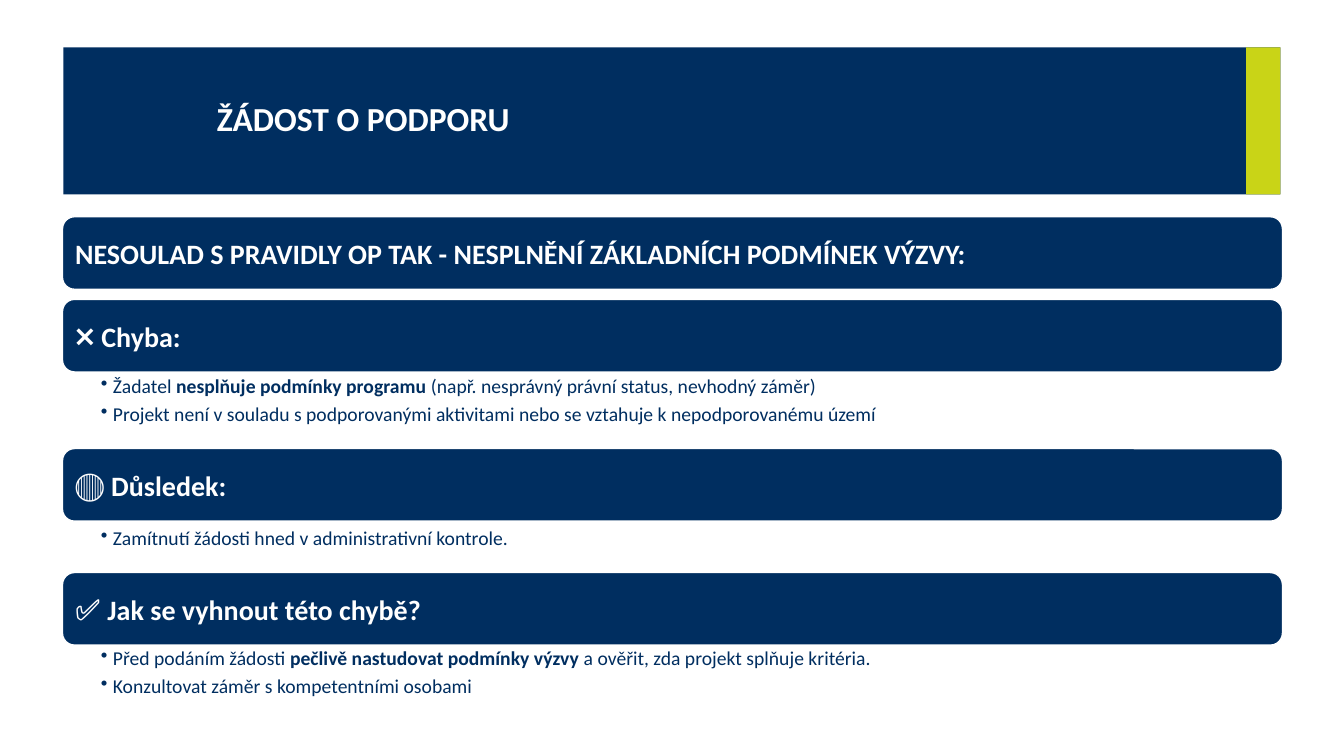
import pptx
import pptx.util
import pptx.dml.color
import pptx.enum.shapes
import pptx.enum.text
import pptx.oxml.ns
import lxml.etree
from pptx.util import Inches

COLORS = {"navy": "002E60", "lime": "C9D417", "white": "FFFFFF"}
FONT = "Calibri"
MIDDLE = pptx.enum.text.MSO_ANCHOR.MIDDLE
TOP = pptx.enum.text.MSO_ANCHOR.TOP
RECTANGLE = pptx.enum.shapes.MSO_SHAPE.RECTANGLE
ROUNDED = pptx.enum.shapes.MSO_SHAPE.ROUNDED_RECTANGLE

presentation = pptx.Presentation()
presentation.slide_width = Inches(13.33)
presentation.slide_height = Inches(7.5)
slide = presentation.slides.add_slide(presentation.slide_layouts[5])


def add_block(kind, left, top, width, height, fill, line=None):
    shape = slide.shapes.add_shape(
        kind, Inches(left), Inches(top), Inches(width), Inches(height))
    shape.shadow.inherit = False
    shape.fill.solid()
    shape.fill.fore_color.rgb = pptx.dml.color.RGBColor.from_string(COLORS[fill])
    if line:
        shape.line.color.rgb = pptx.dml.color.RGBColor.from_string(COLORS[line])
        shape.line.width = pptx.util.Pt(1)
    else:
        shape.line.fill.background()
    return shape


def write_text(shape, paragraphs, color="white", anchor=MIDDLE,
               insets=(0, 0, 0, 0), bullet=False, space_after=0, line_spacing=1.0):
    """Each paragraph is a list of (text, size, bold) runs."""
    frame = shape.text_frame
    frame.word_wrap = True
    frame.auto_size = pptx.enum.text.MSO_AUTO_SIZE.NONE
    frame.vertical_anchor = anchor
    (frame.margin_left, frame.margin_top,
     frame.margin_right, frame.margin_bottom) = map(Inches, insets)
    for index, runs in enumerate(paragraphs):
        paragraph = frame.add_paragraph() if index else frame.paragraphs[0]
        paragraph.alignment = pptx.enum.text.PP_ALIGN.LEFT
        paragraph.space_after = pptx.util.Pt(space_after)
        paragraph.line_spacing = line_spacing
        if bullet:
            paragraph.level = 1
            properties = paragraph._p.get_or_add_pPr()
            properties.set("marL", str(Inches(0.12)))
            properties.set("indent", str(Inches(-0.12)))
            mark = lxml.etree.SubElement(properties, pptx.oxml.ns.qn("a:buChar"))
            mark.set("char", "•")
        for text, size, bold in runs:
            run = paragraph.add_run()
            run.text = text
            run.font.name = FONT
            run.font.size = pptx.util.Pt(size)
            run.font.bold = bold
            run.font.color.rgb = pptx.dml.color.RGBColor.from_string(COLORS[color])


# Title band, with the title brought in front of it
add_block(RECTANGLE, 0.63, 0.47, 12.07, 1.46, "navy")
add_block(RECTANGLE, 12.36, 0.47, 0.34, 1.46, "lime")
title = slide.shapes.title
title.left, title.top = Inches(2.15), Inches(0.47)
title.width, title.height = Inches(9.96), Inches(1.46)
write_text(title, [[("ŽÁDOST O PODPORU", 24, True)]], line_spacing=0.9)
slide.shapes._spTree.append(title._element)

# Sections: bar top, icon, heading, top of the bullets, bullets
sections = [
    (2.15, "", "NESOULAD S PRAVIDLY OP TAK - NESPLNĚNÍ ZÁKLADNÍCH PODMÍNEK VÝZVY:", None, []),
    (2.97, "❌ ", "Chyba:", 3.69, [
        [("Žadatel ", 14, False), ("nesplňuje podmínky programu ", 14, True),
         ("(např. nesprávný právní status, nevhodný záměr)", 14, False)],
        [("Projekt není v souladu s podporovanými aktivitami nebo se vztahuje "
          "k nepodporovanému území", 14, False)]]),
    (4.45, "🔴 ", "Důsledek:", 5.2, [
        [("Zamítnutí žádosti hned v administrativní kontrole.", 14, False)]]),
    (5.68, "✅ ", "Jak se vyhnout této chybě?", 6.39, [
        [("Před podáním žádosti ", 14, False),
         ("pečlivě nastudovat podmínky výzvy", 14, True),
         (" a ověřit, zda projekt splňuje kritéria.", 14, False)],
        [("Konzultovat záměr s kompetentními osobami", 14, False)]]),
]
for bar_top, icon, heading, bullets_top, bullets in sections:
    bar = add_block(ROUNDED, 0.62, bar_top, 12.1, 0.72, "navy", line="white")
    heading_runs = [(icon, 21, True)] if icon else []
    write_text(bar, [heading_runs + [(heading, 20, True)]],
               insets=(0.09, 0.09, 0.09, 0.09))
    if bullets:
        box = slide.shapes.add_textbox(
            Inches(0.62), Inches(bullets_top), Inches(12.1), Inches(0.63))
        write_text(box, bullets, color="navy", anchor=TOP, bullet=True,
                   insets=(0.38, 0.02, 0.11, 0.02), space_after=3)

presentation.save("out.pptx")
